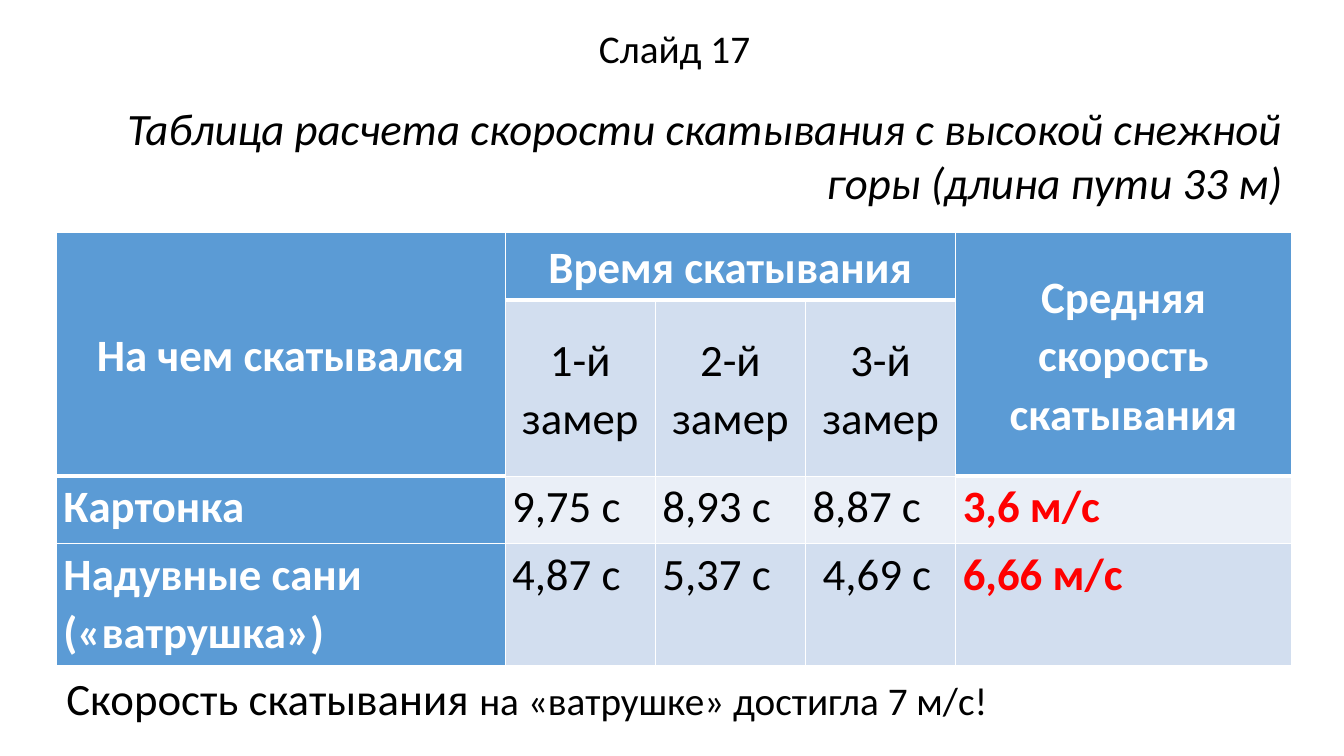
"""Builds the slide with the table of sledging speeds."""
from lxml.etree import SubElement
from pptx import Presentation
from pptx.dml.color import RGBColor
from pptx.enum.text import MSO_ANCHOR as Anchor, MSO_AUTO_SIZE as AutoSize, PP_ALIGN as Align
from pptx.oxml.ns import qn
from pptx.util import Inches, Pt

THEME = {
    "font": "Calibri", "large": 32, "small": 28,
    "text": "000000", "light": "FFFFFF", "accent": "FF0000",
    "header": "5B9BD5", "bands": ["EAEFF7", "D2DEEF"],
}
CAPTIONS = [
    ((1.01, 0.95, 11.81, 1.18), Align.RIGHT, True,
     [("Таблица расчета скорости скатывания с высокой снежной горы (длина пути 33 м)", "large")]),
    ((5.65, 0.19, 2.08, 0.57), Align.CENTER, False, [("Слайд 17", "small")]),
    ((0.56, 6.6, 12.27, 0.64), Align.LEFT, False,
     [("Скорость скатывания ", "large"), ("на «ватрушке» достигла 7 м/с!", "small")]),
]
ROWS = [
    ["На чем скатывался", "Время скатывания", "", "", "Средняя скорость скатывания"],
    ["", "1-й замер", "2-й замер", "3-й замер", ""],
    ["Картонка", "9,75 с", "8,93 с", "8,87 с", "3,6 м/с"],
    ["Надувные сани («ватрушка»)", "4,87 с", "5,37 с", " 4,69 с", "6,66 м/с"],
]
MERGES = [((0, 0), (1, 0)), ((0, 1), (0, 3)), ((0, 4), (1, 4))]
TABLE_LEFT, TABLE_TOP = 0.56, 2.31
COLUMN_WIDTHS = [4.45, 1.49, 1.49, 1.49, 3.33]
ROW_HEIGHTS = [0.67, 1.36, 0.67, 1.36]


def color(name):
    return RGBColor.from_string(THEME.get(name, name))


def set_fill(item, name):
    item.fill.solid()
    item.fill.fore_color.rgb = color(name)


def set_font(font, size, name="text", bold=False, italic=False):
    font.name, font.size = THEME["font"], Pt(THEME[size])
    font.bold, font.italic = bold, italic
    font.color.rgb = color(name)


def add_caption(page, place, align, italic, spans):
    box = page.shapes.add_textbox(*map(Inches, place))
    set_fill(box, "light")
    frame = box.text_frame
    frame.word_wrap = True
    frame.auto_size = AutoSize.SHAPE_TO_FIT_TEXT
    para = frame.paragraphs[0]
    para.alignment = align
    set_font(para.font, spans[0][1], italic=italic)
    for text, size in spans:
        span = para.add_run()
        span.text = text
        set_font(span.font, size, italic=italic)


def set_borders(cell, bottom):
    properties = cell._tc.get_or_add_tcPr()
    widths = {"a:lnL": 1, "a:lnR": 1, "a:lnT": 1, "a:lnB": bottom}
    for tag, width in widths.items():
        line = SubElement(properties, qn(tag), w=str(Pt(width)))
        fill = SubElement(line, qn("a:solidFill"))
        SubElement(fill, qn("a:srgbClr"), val=THEME["light"])


def style_cell(cell, row, column, text):
    heading = row < 2
    dark = row == 0 or column == 0 or (heading and column == 4)
    result = not heading and column == 4
    set_borders(cell, 3 if heading and dark else 1)
    set_fill(cell, "header" if dark else THEME["bands"][row % 2])
    cell.margin_left = cell.margin_right = Inches(0.07)
    cell.margin_top = cell.margin_bottom = 0
    cell.vertical_anchor = Anchor.MIDDLE if heading else Anchor.TOP
    para = cell.text_frame.paragraphs[0]
    para.alignment = Align.CENTER if heading else Align.LEFT
    para.line_spacing = 1.07
    set_font(para.font, "large", "light" if dark else "accent" if result else "text", dark or result)
    if text:
        para.add_run().text = text


def add_speed_table(page):
    frame = page.shapes.add_table(
        len(ROWS), len(COLUMN_WIDTHS), Inches(TABLE_LEFT), Inches(TABLE_TOP),
        Inches(sum(COLUMN_WIDTHS)), Inches(sum(ROW_HEIGHTS)))
    table = frame.table
    for column, width in zip(table.columns, COLUMN_WIDTHS):
        column.width = Inches(width)
    for row, height in zip(table.rows, ROW_HEIGHTS):
        row.height = Inches(height)
    for row, texts in enumerate(ROWS):
        for column, text in enumerate(texts):
            style_cell(table.cell(row, column), row, column, text)
    for first, last in MERGES:
        table.cell(*first).merge(table.cell(*last))


def main():
    deck = Presentation()
    deck.slide_width, deck.slide_height = Inches(13.33), Inches(7.5)
    page = deck.slides.add_slide(deck.slide_layouts[6])
    add_speed_table(page)
    for caption in CAPTIONS:
        add_caption(page, *caption)
    deck.save("out.pptx")


if __name__ == "__main__":
    main()
